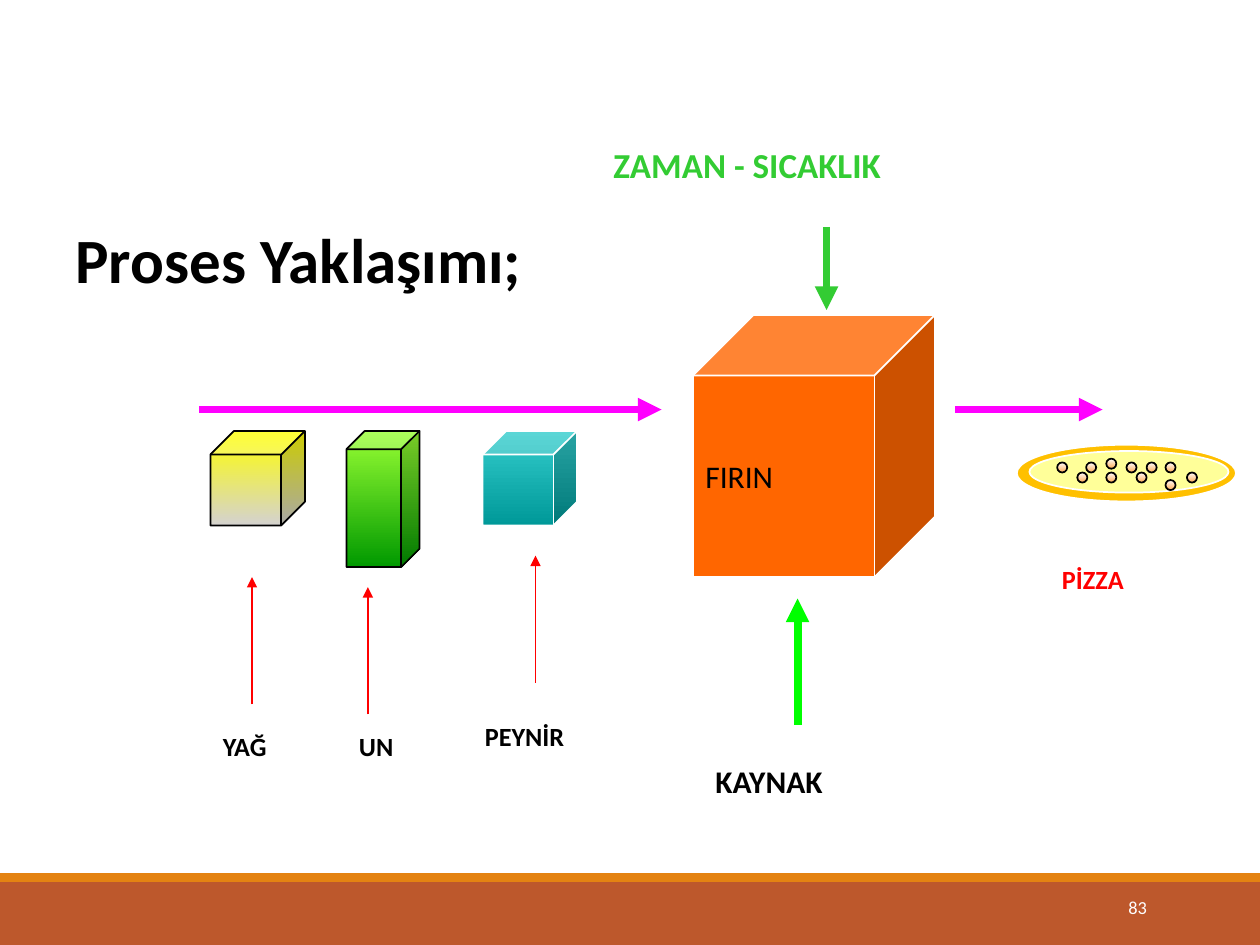
from dataclasses import dataclass

import pptx
import pptx.dml.color
import pptx.enum.shapes
import pptx.enum.text
import pptx.oxml
import pptx.oxml.ns
import pptx.util
from pptx.util import Inches

RGBColor = pptx.dml.color.RGBColor
ShapeType = pptx.enum.shapes.MSO_SHAPE
Align = pptx.enum.text.PP_ALIGN
Anchor = pptx.enum.text.MSO_ANCHOR

BLACK = RGBColor(0x00, 0x00, 0x00)
WHITE = RGBColor(0xFF, 0xFF, 0xFF)
RED = RGBColor(0xFF, 0x00, 0x00)
MAGENTA = RGBColor(0xFF, 0x00, 0xFF)
LIME = RGBColor(0x00, 0xFF, 0x00)
CONTROL_GREEN = RGBColor(0x33, 0xCC, 0x33)
OVEN_ORANGE = RGBColor(0xFF, 0x66, 0x00)
FOOTER_BROWN = RGBColor(0xBD, 0x58, 0x2C)
FOOTER_ORANGE = RGBColor(0xE4, 0x83, 0x12)
CRUST = RGBColor(0xFF, 0xC0, 0x00)
CHEESE = RGBColor(0xFF, 0xFF, 0x99)
OIL = (RGBColor(0xFF, 0xFF, 0x00), RGBColor(0xD4, 0xD2, 0xD0))
FLOUR = (RGBColor(0x99, 0xFF, 0x33), RGBColor(0x00, 0x99, 0x00))
CURD = (RGBColor(0x33, 0xCC, 0xCC), RGBColor(0x00, 0x99, 0x99))
TOPPING = (WHITE, RGBColor(0xFF, 0xAC, 0x57))


@dataclass(frozen=True)
class Solid:
    """A filled preset shape; two colours make a top-to-bottom gradient."""
    kind: ShapeType
    box: tuple[float, float, float, float]
    colors: tuple[RGBColor, ...]
    outline: RGBColor | None = None


@dataclass(frozen=True)
class Arrow:
    start: tuple[float, float]
    end: tuple[float, float]
    color: RGBColor
    weight: float


@dataclass(frozen=True)
class Label:
    text: str
    box: tuple[float, float, float, float]
    size: float
    color: RGBColor = BLACK
    bold: bool = True
    align: Align = Align.LEFT
    line_spacing: float = 1.0


FOOTER = [
    Solid(ShapeType.RECTANGLE, (0, 7, 10, 0.5), (FOOTER_BROWN,)),
    Solid(ShapeType.RECTANGLE, (0, 6.93, 10, 0.07), (FOOTER_ORANGE,)),
]
INGREDIENTS = [
    Solid(ShapeType.CUBE, (1.67, 3.42, 0.75, 0.75), OIL, BLACK),
    Solid(ShapeType.CUBE, (2.75, 3.42, 0.58, 1.08), FLOUR, BLACK),
    Solid(ShapeType.CUBE, (3.83, 3.42, 0.75, 0.75), CURD, WHITE),
]
OVEN = Solid(ShapeType.CUBE, (5.5, 2.5, 1.92, 2.08), (OVEN_ORANGE,), WHITE)

TOPPING_SIZE = 0.08
TOPPING_ROWS = {
    3.64: (8.78,),
    3.67: (8.39, 8.62, 8.94, 9.1, 9.25),
    3.75: (8.55, 8.78, 9.02, 9.42),
    3.81: (9.25,),
}
PIZZA = [
    Solid(ShapeType.OVAL, (8.07, 3.53, 1.74, 0.45), (CRUST,), WHITE),
    Solid(ShapeType.OVAL, (8.17, 3.58, 1.58, 0.33), (CHEESE,), WHITE),
] + [
    Solid(ShapeType.OVAL, (left, top, TOPPING_SIZE, TOPPING_SIZE), TOPPING, BLACK)
    for top, lefts in TOPPING_ROWS.items()
    for left in lefts
]

FLOW_Y = 3.25
FLOWS = [
    Arrow((1.58, FLOW_Y), (5.25, FLOW_Y), MAGENTA, 4.5),
    Arrow((7.58, FLOW_Y), (8.75, FLOW_Y), MAGENTA, 4.5),
    Arrow((6.56, 1.8), (6.56, 2.46), CONTROL_GREEN, 4.5),
    Arrow((6.33, 5.75), (6.33, 4.75), LIME, 4.5),
]
INGREDIENT_ARROW_LENGTH = 1.01
INGREDIENT_ARROWS = [
    Arrow((x, bottom), (x, bottom - INGREDIENT_ARROW_LENGTH), RED, 1)
    for x, bottom in ((2, 5.59), (2.92, 5.67), (4.25, 5.42))
]

LABELS = [
    Label("Proses Yaklaşımı;", (0.5, 1.82, 4.22, 0.78), 36, line_spacing=0.8),
    Label("ZAMAN - SICAKLIK", (4.77, 1.09, 3.33, 0.44), 20, CONTROL_GREEN),
    Label("PİZZA", (8.33, 4.42, 1.25, 0.35), 15, RED),
    Label("KAYNAK", (5.58, 6, 2.09, 0.57), 18),
    Label("PEYNİR", (3.75, 5.67, 1, 0.35), 15),
    Label("UN", (2.75, 5.75, 0.92, 0.35), 15),
    Label("YAĞ", (1.67, 5.75, 0.75, 0.35), 15),
    Label("83", (8.12, 7.06, 1.08, 0.4), 10.5, WHITE, bold=False, align=Align.RIGHT),
]


def apply_format(target, values: dict) -> None:
    for name, value in values.items():
        setattr(target, name, value)


def write(paragraph, text: str, size: float, color: RGBColor, bold: bool) -> None:
    run = paragraph.add_run()
    run.text = text
    apply_format(run.font, {"name": "Calibri", "size": pptx.util.Pt(size), "bold": bold})
    run.font.color.rgb = color


def draw_solid(shapes, solid: Solid):
    shape = shapes.add_shape(solid.kind, *map(Inches, solid.box))
    shape.shadow.inherit = False
    if len(solid.colors) == 1:
        shape.fill.solid()
        shape.fill.fore_color.rgb = solid.colors[0]
    else:
        shape.fill.gradient()
        shape.fill.gradient_angle = 270
        for stop, color in zip(shape.fill.gradient_stops, solid.colors):
            stop.color.rgb = color
    if solid.outline is None:
        shape.line.fill.background()
    else:
        shape.line.color.rgb = solid.outline
        shape.line.width = pptx.util.Pt(1)
    return shape


def draw_arrow(shapes, arrow: Arrow) -> None:
    connector = shapes.add_connector(
        pptx.enum.shapes.MSO_CONNECTOR.STRAIGHT, *map(Inches, arrow.start + arrow.end)
    )
    connector.line.color.rgb = arrow.color
    connector.line.width = pptx.util.Pt(arrow.weight)
    head = pptx.oxml.parse_xml(
        f'<a:tailEnd {pptx.oxml.ns.nsdecls("a")} type="triangle"/>'
    )
    connector.line._get_or_add_ln().append(head)
    no_effects = pptx.oxml.parse_xml(f'<a:effectLst {pptx.oxml.ns.nsdecls("a")}/>')
    connector._element.spPr.append(no_effects)


def draw_label(shapes, label: Label) -> None:
    frame = shapes.add_textbox(*map(Inches, label.box)).text_frame
    frame.word_wrap = True
    paragraph = frame.paragraphs[0]
    apply_format(
        paragraph, {"alignment": label.align, "line_spacing": label.line_spacing}
    )
    write(paragraph, label.text, label.size, label.color, label.bold)


def draw_oven(shapes) -> None:
    frame = draw_solid(shapes, OVEN).text_frame
    apply_format(frame, {"word_wrap": False, "vertical_anchor": Anchor.MIDDLE})
    frame.paragraphs[0].alignment = Align.LEFT
    write(frame.paragraphs[0], "FIRIN", 18, BLACK, False)


def main() -> None:
    deck = pptx.Presentation()
    apply_format(deck, {"slide_width": Inches(10), "slide_height": Inches(7.5)})
    shapes = deck.slides.add_slide(deck.slide_layouts[6]).shapes
    for solid in FOOTER + INGREDIENTS:
        draw_solid(shapes, solid)
    draw_oven(shapes)
    for arrow in FLOWS + INGREDIENT_ARROWS:
        draw_arrow(shapes, arrow)
    for label in LABELS:
        draw_label(shapes, label)
    pizza = shapes.add_group_shape()
    for solid in PIZZA:
        draw_solid(pizza.shapes, solid)
    deck.save("out.pptx")


if __name__ == "__main__":
    main()
